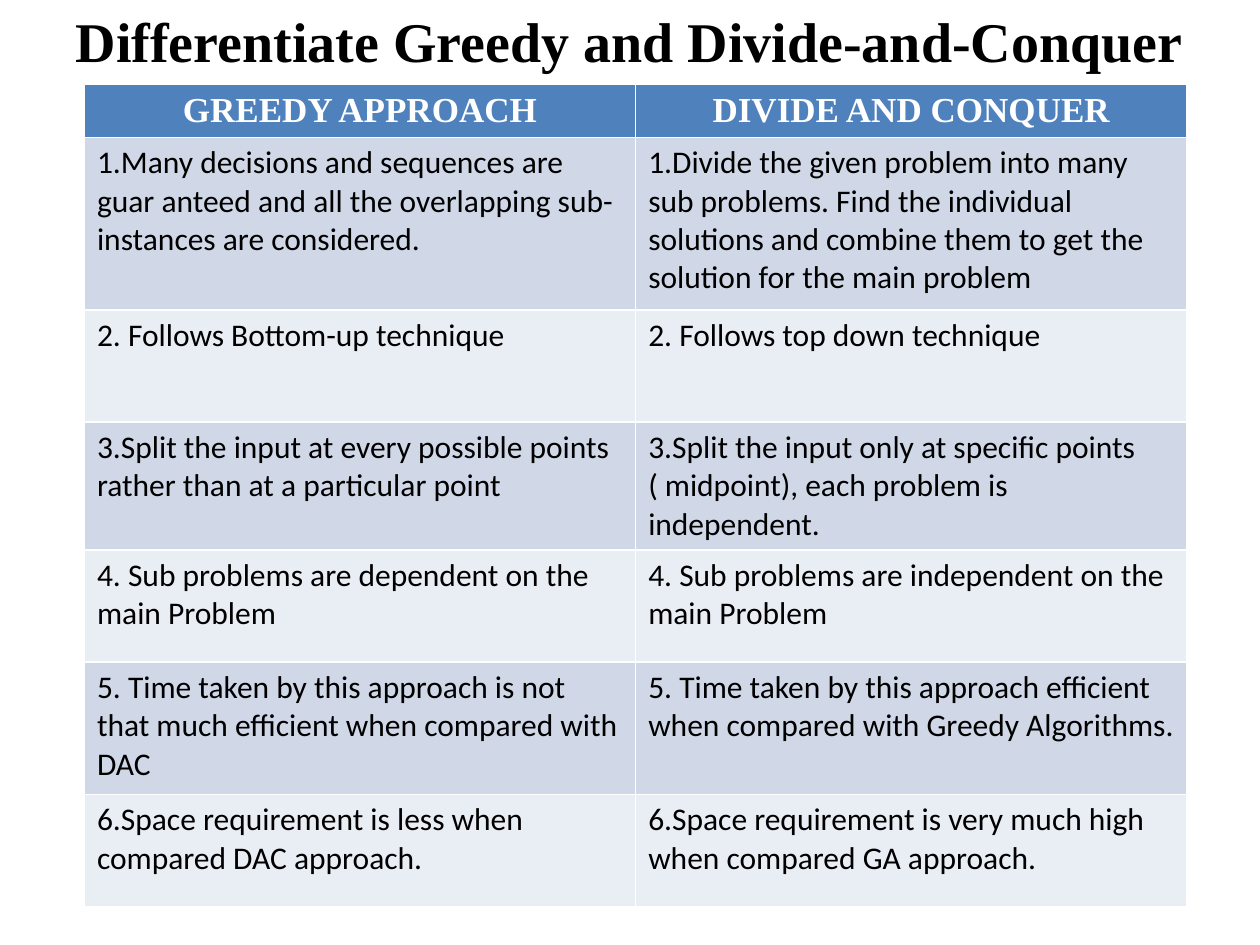
"""Build a slide that compares the greedy and divide-and-conquer approaches."""
from pptx import Presentation
from pptx import util as u
from pptx.dml.color import RGBColor
from pptx.enum import text as t

BLACK = RGBColor(0x00, 0x00, 0x00)
WHITE = RGBColor(0xFF, 0xFF, 0xFF)
BLUE = RGBColor(0x4F, 0x81, 0xBD)
BANDS = RGBColor(0xE9, 0xED, 0xF4), RGBColor(0xD0, 0xD8, 0xE8)

TITLE = {"name": "Times New Roman", "size": u.Pt(32), "bold": True}
HEAD = {"name": "Times New Roman", "size": u.Pt(20), "bold": True}
BODY = {"name": "Calibri", "size": u.Pt(18), "bold": False}

LEFT, TOP, WIDTH = 0.67, 0.67, 8.75
HEIGHTS = 0.42, 1.37, 0.89, 0.89, 0.89, 1.05, 0.89
ROWS = (
    ("GREEDY APPROACH", "DIVIDE AND CONQUER"),
    ("1.Many decisions and sequences are guar anteed and all the "
     "overlapping sub-instances are considered.",
     "1.Divide the given problem into many sub problems. Find the individual "
     "solutions and combine them to get the solution for the main problem"),
    ("2. Follows Bottom-up technique", "2. Follows top down technique"),
    ("3.Split the input at every possible points rather than at a "
     "particular point",
     "3.Split the input only at specific points ( midpoint), each problem "
     "is independent."),
    ("4. Sub problems are dependent on the main Problem",
     "4. Sub problems are independent on the main Problem"),
    ("5. Time taken by this approach is not that much efficient when "
     "compared with DAC",
     "5. Time taken by this approach efficient when compared with "
     "Greedy Algorithms."),
    ("6.Space requirement is less when compared DAC approach.",
     "6.Space requirement is very much high when compared GA approach."),
)


def write(frame, words, style, color, align):
    """Put one formatted paragraph into a text frame and return it."""
    para = frame.paragraphs[0]
    para.alignment = align
    run = para.add_run()
    run.text = words
    for key, value in style.items():
        setattr(run.font, key, value)
    run.font.color.rgb = color
    return para


def add_title(slide, words):
    """Move the title placeholder to the top edge and fill it."""
    title = slide.shapes.title
    box = {"left": 0.5, "top": 0, "width": 9, "height": TOP}
    for key, value in box.items():
        setattr(title, key, u.Inches(value))
    frame = title.text_frame
    frame.word_wrap = True
    frame.auto_size = t.MSO_AUTO_SIZE.NONE
    frame.vertical_anchor = t.MSO_ANCHOR.TOP
    frame.margin_right = 0
    para = write(frame, words, TITLE, BLACK, t.PP_ALIGN.LEFT)
    para.space_before = u.Pt(4)


def add_grid(slide, rows):
    """Add the comparison table with a header and banded rows."""
    count = len(rows[0])
    area = [u.Inches(n) for n in (LEFT, TOP, WIDTH, sum(HEIGHTS))]
    grid = slide.shapes.add_table(len(rows), count, *area).table
    for col in grid.columns:
        col.width = u.Inches(WIDTH / count)
    for i, (words, high) in enumerate(zip(rows, HEIGHTS)):
        grid.rows[i].height = u.Inches(high)
        if i == 0:
            look, fill = (HEAD, WHITE, t.PP_ALIGN.CENTER), BLUE
        else:
            look, fill = (BODY, BLACK, t.PP_ALIGN.LEFT), BANDS[i % 2]
        for j, word in enumerate(words):
            cell = grid.cell(i, j)
            cell.fill.solid()
            cell.fill.fore_color.rgb = fill
            write(cell.text_frame, word, *look)


def main():
    """Build and save the slide."""
    deck = Presentation()
    deck.slide_width, deck.slide_height = u.Inches(10), u.Inches(7.5)
    slide = deck.slides.add_slide(deck.slide_layouts[5])
    add_title(slide, "Differentiate Greedy and Divide-and-Conquer")
    add_grid(slide, ROWS)
    deck.save("out.pptx")


if __name__ == "__main__":
    main()
